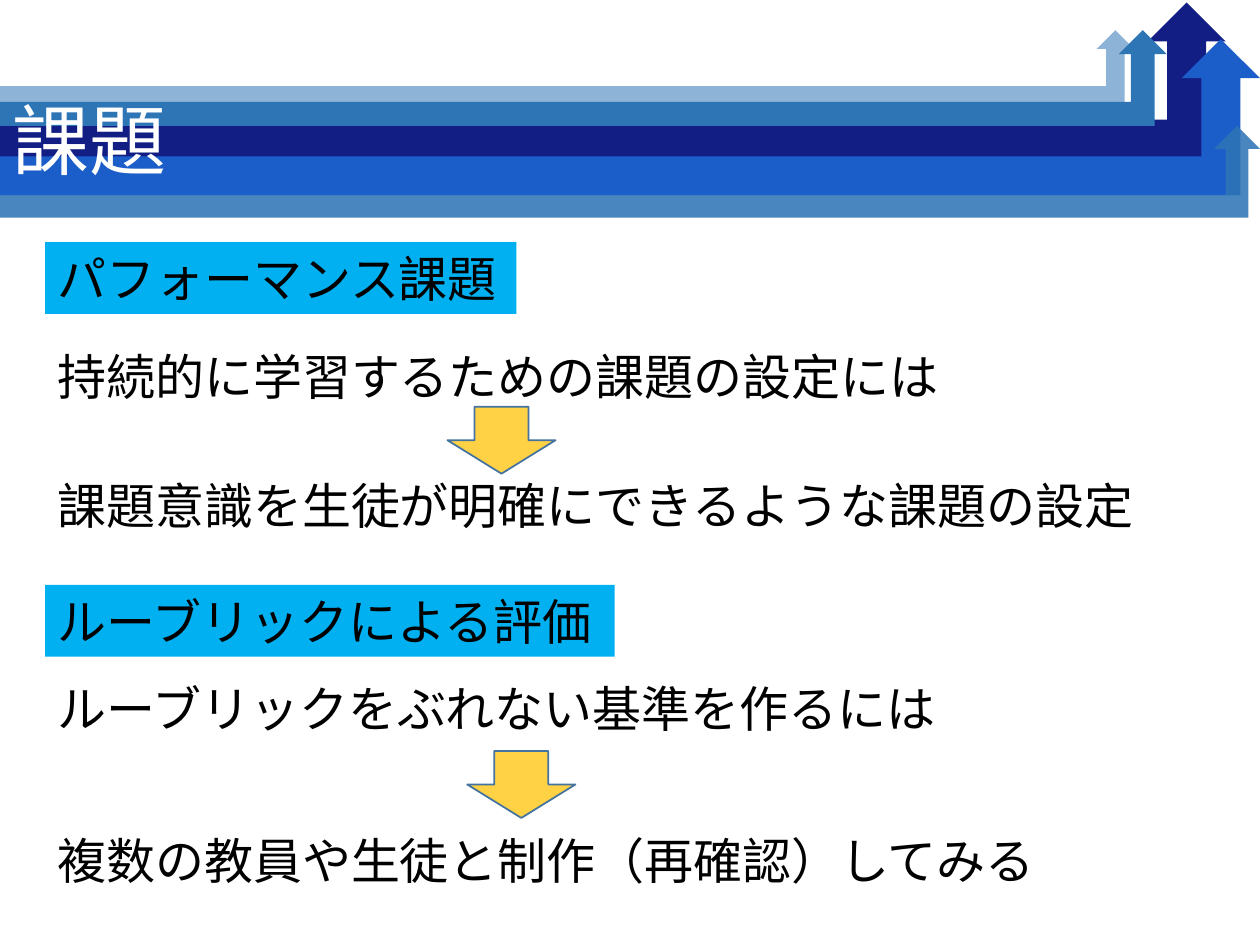
from pptx import Presentation
from pptx.dml.color import RGBColor
from pptx.enum.shapes import MSO_SHAPE
from pptx.enum.text import MSO_ANCHOR, PP_ALIGN
from pptx.oxml.ns import qn
from pptx.util import Cm, Pt
from lxml.etree import SubElement

FONT = "Noto Sans CJK JP"
LEFT, ROW_HEIGHT = 0.91, 1.45

# Header arrows from back to front: top, width, height, colour, opacity in %
HEADER_ARROWS = [
    (0.05, 24.71, 3.15, "131E85", 100),
    (0.79, 25.4, 3.15, "1B5DC9", 100),
    (0.61, 23.52, 1.93, "2E75B6", 100),
    (0.61, 22.86, 1.5, "2E75B6", 54),
    (2.54, 25.4, 1.85, "2E75B6", 87),
]
# Section headings and statements: text, top, width
HEADINGS = [
    ("パフォーマンス課題", 4.88, 9.5),
    ("ルーブリックによる評価", 11.79, 11.48),
]
STATEMENTS = [
    ("持続的に学習するための課題の設定には", 6.86, 18.47),
    ("課題意識を生徒が明確にできるような課題の設定", 9.45, 23.24),
    ("ルーブリックをぶれない基準を作るには", 13.54, 23.8),
    ("複数の教員や生徒と制作（再確認）してみる", 16.61, 23.8),
]
DOWN_ARROWS = [(9.02, 8.2), (9.42, 15.14)]


def color(value):
    return RGBColor.from_string(value)


def add_filled(s, kind, left, top, width, height, fill, opacity=100, line=None):
    sp = s.shapes.add_shape(kind, Cm(left), Cm(top), Cm(width), Cm(height))
    sp.shadow.inherit = False
    sp.fill.solid()
    sp.fill.fore_color.rgb = color(fill)
    if opacity < 100:
        clr = sp._element.spPr.find(qn("a:solidFill")).find(qn("a:srgbClr"))
        SubElement(clr, qn("a:alpha")).set("val", str(opacity * 1000))
    if line:
        sp.line.color.rgb = color(line)
        sp.line.width = Pt(1)
    else:
        sp.line.fill.background()
    return sp


def write_text(sp, text, size=28, fill="000000", spacing=1.0):
    tf = sp.text_frame
    tf.word_wrap = True
    tf.vertical_anchor = MSO_ANCHOR.MIDDLE
    tf.margin_top = tf.margin_bottom = 0
    p = tf.paragraphs[0]
    p.alignment = PP_ALIGN.LEFT
    p.line_spacing = spacing
    r = p.add_run()
    r.text = text
    r.font.size = Pt(size)
    r.font.name = FONT
    r.font.color.rgb = color(fill)
    SubElement(r._r.get_or_add_rPr(), qn("a:ea")).set("typeface", FONT)


def add_text(s, text, left, top, width, height, **style):
    sp = s.shapes.add_textbox(Cm(left), Cm(top), Cm(width), Cm(height))
    write_text(sp, text, **style)


def main():
    prs = Presentation()
    prs.slide_width, prs.slide_height = Cm(25.4), Cm(19.05)
    s = prs.slides.add_slide(prs.slide_layouts[6])

    # Header with title
    for top, width, height, fill, opacity in HEADER_ARROWS:
        add_filled(s, MSO_SHAPE.BENT_UP_ARROW, 0, top, width, height, fill, opacity)
    add_text(s, "課題", 0, 1.14, 29.49, 3.53, size=44, fill="FFFFFF", spacing=0.9)

    # Headings and statements
    for text, top, width in HEADINGS:
        sp = add_filled(s, MSO_SHAPE.RECTANGLE, LEFT, top, width, ROW_HEIGHT, "00B0F0")
        write_text(sp, text)
    for text, top, width in STATEMENTS:
        add_text(s, text, LEFT, top, width, ROW_HEIGHT)

    # Arrows between statements
    for left, top in DOWN_ARROWS:
        add_filled(s, MSO_SHAPE.DOWN_ARROW, left, top, 2.18, 1.35, "FFC000", 73, "43739E")

    prs.save("out.pptx")


if __name__ == "__main__":
    main()
